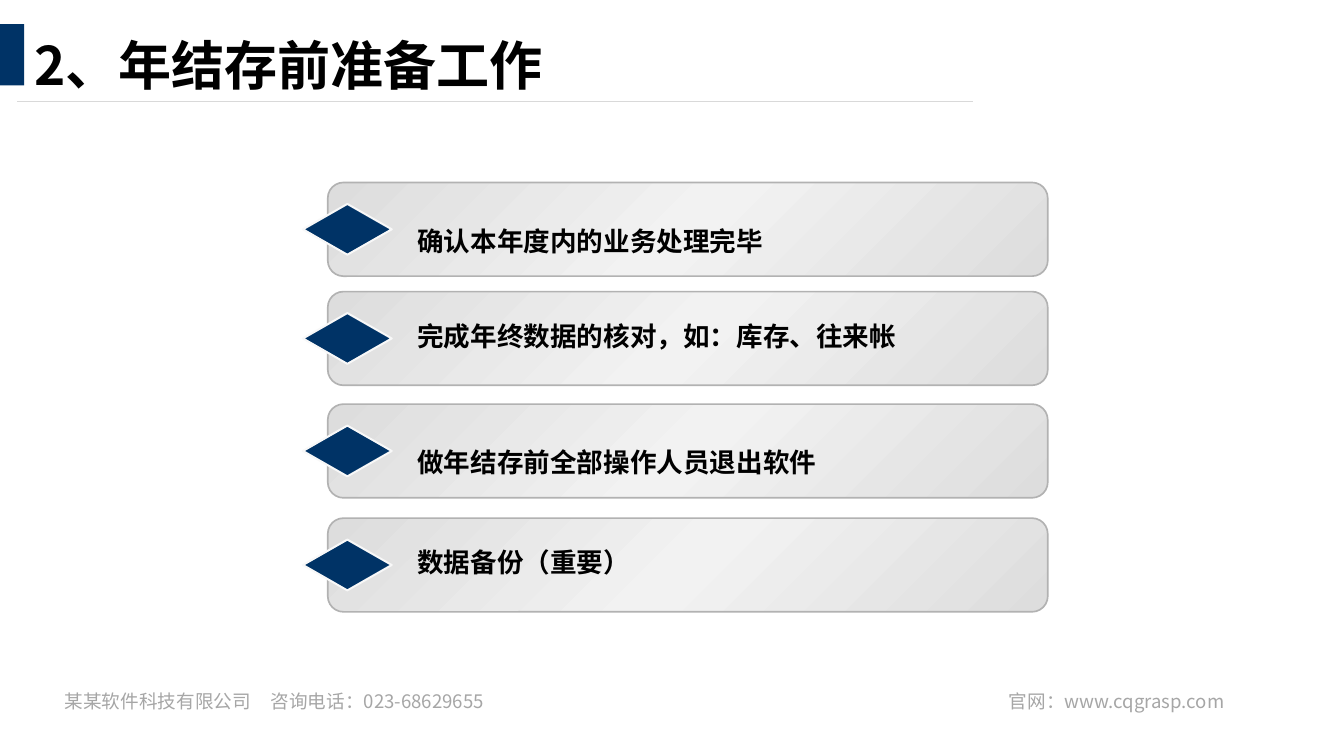
from lxml.etree import SubElement
from copy import deepcopy

from pptx import Presentation
from pptx.dml.color import RGBColor
from pptx.enum.shapes import MSO_CONNECTOR, MSO_SHAPE
from pptx.enum.text import MSO_AUTO_SIZE, PP_ALIGN
from pptx.oxml.ns import qn
from pptx.util import Cm, Pt

FONT = "Noto Sans CJK SC"
NAVY = RGBColor(0x00, 0x33, 0x66)
BLACK = RGBColor(0x00, 0x00, 0x00)
FOOTER_GRAY = RGBColor(0xA6, 0xA6, 0xA6)
RULE_GRAY = RGBColor(0xD9, 0xD9, 0xD9)
PANEL_EDGE = RGBColor(0xB2, 0xB2, 0xB2)
PANEL_DARK = RGBColor(0xDD, 0xDD, 0xDD)
PANEL_LIGHT = RGBColor(0xF2, 0xF2, 0xF2)
DIAMOND_EDGE = RGBColor(0xF8, 0xF8, 0xF8)

STEPS = [
    ("确认本年度内的业务处理完毕", 4.85, 0.59),
    ("完成年终数据的核对，如：库存、往来帐", 7.75, 0.2),
    ("做年结存前全部操作人员退出软件", 10.74, 0.56),
    ("数据备份（重要）", 13.77, 0.2),
]


def add_label(slide, left, top, width, height, text, size, color,
              bold=False, align=PP_ALIGN.LEFT, tab=None):
    label = slide.shapes.add_textbox(Cm(left), Cm(top), Cm(width), Cm(height))
    frame = label.text_frame
    frame.word_wrap = True
    frame.auto_size = MSO_AUTO_SIZE.SHAPE_TO_FIT_TEXT
    frame.text = text
    paragraph = frame.paragraphs[0]
    paragraph.alignment = align
    if tab:
        stops = SubElement(paragraph._p.get_or_add_pPr(), qn("a:tabLst"))
        SubElement(stops, qn("a:tab"), pos=str(Cm(tab)), algn="l")
    for run in paragraph.runs:
        run.font.name = FONT
        run.font.size = Pt(size)
        run.font.bold = bold
        run.font.color.rgb = color
        SubElement(run._r.get_or_add_rPr(), qn("a:ea"), typeface=FONT)
    return frame


def add_preset(slide, preset, left, top, width, height):
    shape = slide.shapes.add_shape(preset, Cm(left), Cm(top), Cm(width), Cm(height))
    shape.shadow.inherit = False
    return shape


def fill_panel(panel):
    panel.fill.gradient()
    panel.fill.gradient_angle = 315
    stop_list = panel._element.spPr.find(qn("a:gradFill")).find(qn("a:gsLst"))
    stop_list.append(deepcopy(stop_list[-1]))
    shades = (PANEL_DARK, PANEL_LIGHT, PANEL_DARK)
    for stop, shade, position in zip(panel.fill.gradient_stops, shades, (0, 0.5, 1)):
        stop.color.rgb = shade
        stop.position = position


def add_heading(slide, left, top, text):
    marker = add_preset(slide, MSO_SHAPE.RECTANGLE, left, top, 0.64, 1.63)
    marker.fill.solid()
    marker.fill.fore_color.rgb = NAVY
    marker.line.fill.background()
    add_label(slide, left + 0.66, top + 0.1, 15.67, 1.96, text, 40, BLACK, bold=True)
    rule_y = Cm(top + 2.06)
    rule = slide.shapes.add_connector(
        MSO_CONNECTOR.STRAIGHT, Cm(left + 0.46), rule_y, Cm(left + 25.86), rule_y)
    rule.line.color.rgb = RULE_GRAY
    rule.line.width = Pt(0.5)
    SubElement(rule._element.spPr, qn("a:effectLst"))


def add_step(slide, left, top, width, height, text, text_drop):
    panel = add_preset(slide, MSO_SHAPE.ROUNDED_RECTANGLE, left, top, width, height)
    fill_panel(panel)
    panel.line.color.rgb = PANEL_EDGE
    panel.line.width = Pt(1.25)

    diamond_width, diamond_height = 2.36, 1.35
    diamond = add_preset(slide, MSO_SHAPE.DIAMOND, left - 0.66,
                         top + (height - diamond_height) / 2,
                         diamond_width, diamond_height)
    diamond.fill.solid()
    diamond.fill.fore_color.rgb = NAVY
    diamond.line.color.rgb = DIAMOND_EDGE
    diamond.line.width = Pt(1.5)

    frame = add_label(slide, left + 0.86, top + text_drop, 16.9, 1.37,
                      text, 20, BLACK, bold=True)
    frame.margin_left = Cm(1.52)
    frame.paragraphs[0].line_spacing = 1.5


def add_footer(slide, left, top, width):
    half = 12.73
    add_label(slide, left, top, half, 0.86,
              "某某软件科技有限公司\t咨询电话：023-68629655", 14, FOOTER_GRAY, tab=5.47)
    add_label(slide, left + width - half, top, half, 0.86,
              "官网：www.cqgrasp.com", 14, FOOTER_GRAY, align=PP_ALIGN.RIGHT)


def main():
    deck = Presentation()
    deck.slide_width, deck.slide_height = Cm(35.71), Cm(20.09)
    slide = deck.slides.add_slide(deck.slide_layouts[6])
    add_footer(slide, 1.47, 18.21, 31.32)
    add_heading(slide, 0, 0.64, "2、年结存前准备工作")
    for text, top, text_drop in STEPS:
        add_step(slide, 8.71, top, 19.13, 2.49, text, text_drop)
    deck.save("out.pptx")


if __name__ == "__main__":
    main()
